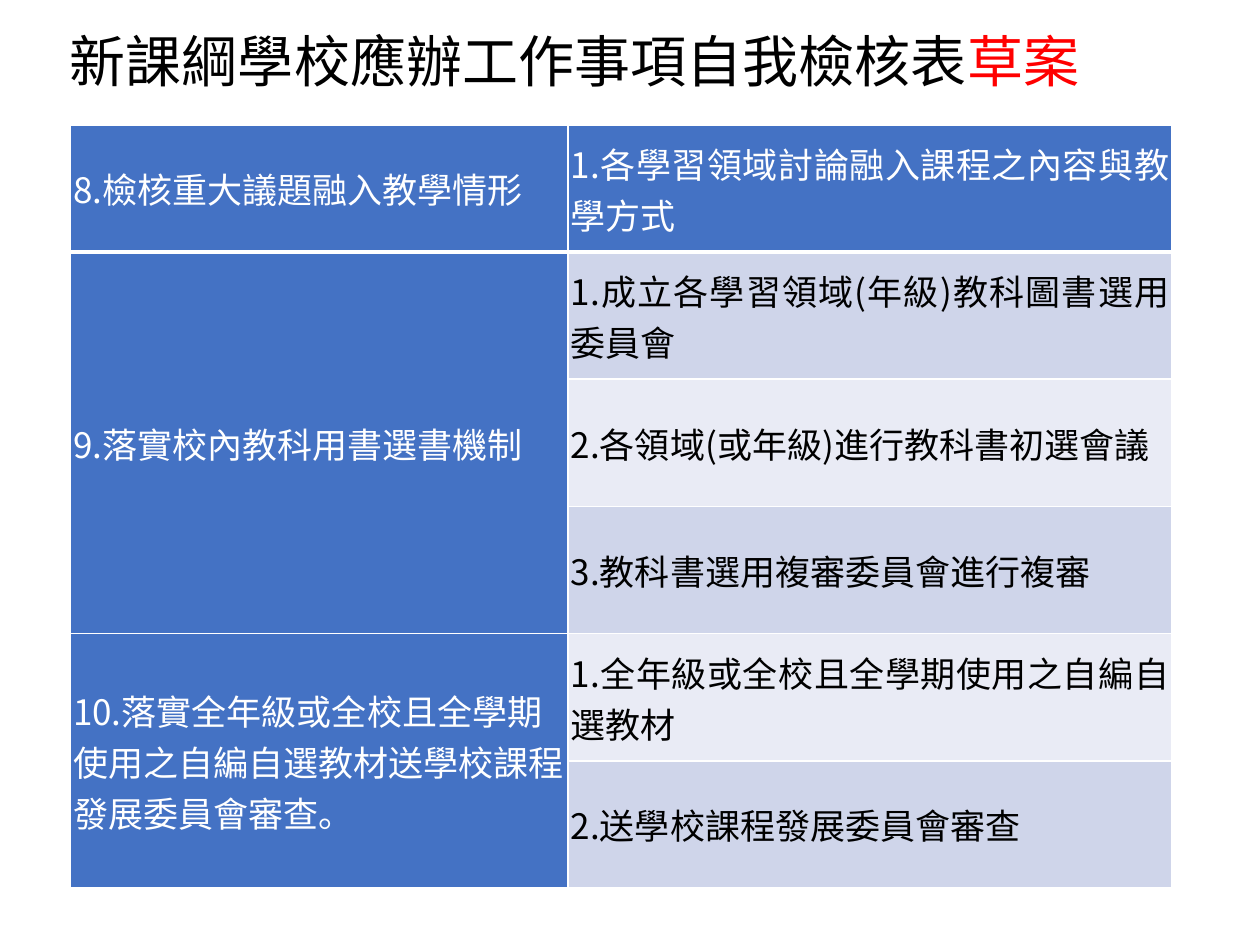
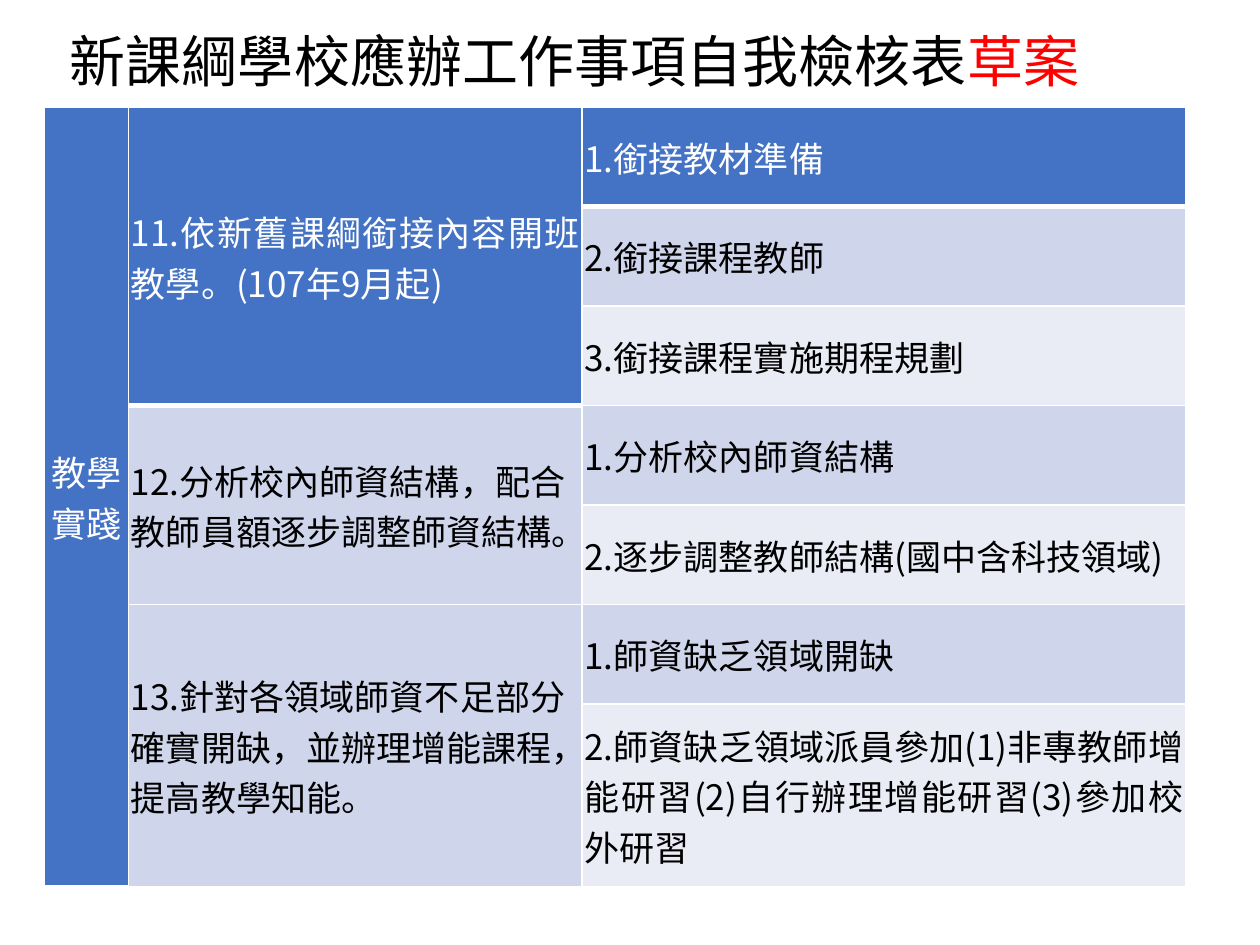
from lxml import etree
from pptx import Presentation
from pptx.dml.color import RGBColor
from pptx.enum.text import MSO_ANCHOR, MSO_AUTO_SIZE, PP_ALIGN
from pptx.oxml.ns import qn
from pptx.util import Inches, Pt

LEFT, CENTER, JUSTIFY = PP_ALIGN.LEFT, PP_ALIGN.CENTER, PP_ALIGN.JUSTIFY
TITLE_ONLY = 5
FONT = "Noto Sans CJK TC"
COLORS = {"black": "000000", "white": "FFFFFF", "draft": "FF0000",
          "heading": "4472C4", "odd": "CFD5EA", "even": "E9EBF5"}

# Content
TITLE = [("新課綱學校應辦工作事項自我檢核表", "black"), ("草案", "draft")]
TITLE_BOX = (0.19, 0.16, 8.74, 0.64)

# Each task: wording, alignment, check items
CHECKLISTS = [
    {
        "at": (0.56, 0.99),
        "columns": [3.95, 4.79],
        "rows": [1.01] * 6,
        "category": None,
        "blue_tasks": True,
        "tasks": [
            ("8.檢核重大議題融入教學情形", LEFT,
             ["1.各學習領域討論融入課程之內容與教學方式"]),
            ("9.落實校內教科用書選書機制", LEFT,
             ["1.成立各學習領域(年級)教科圖書選用委員會",
              "2.各領域(或年級)進行教科書初選會議",
              "3.教科書選用複審委員會進行複審"]),
            ("10.落實全年級或全校且全學期使用之自編自選教材送學校課程發展委員會審查。", LEFT,
             ["1.全年級或全校且全學期使用之自編自選教材",
              "2.送學校課程發展委員會審查"]),
        ],
    },
    {
        "at": (0.35, 0.85),
        "columns": [0.67, 3.6, 4.79],
        "rows": [0.79] * 6 + [1.45],
        "category": "教學實踐",
        "blue_tasks": False,
        "tasks": [
            ("11.依新舊課綱銜接內容開班教學。(107年9月起)", JUSTIFY,
             ["1.銜接教材準備", "2.銜接課程教師", "3.銜接課程實施期程規劃"]),
            ("12.分析校內師資結構，配合教師員額逐步調整師資結構。", LEFT,
             ["1.分析校內師資結構", "2.逐步調整教師結構(國中含科技領域)"]),
            ("13.針對各領域師資不足部分確實開缺，並辦理增能課程，提高教學知能。", LEFT,
             ["1.師資缺乏領域開缺",
              "2.師資缺乏領域派員參加(1)非專教師增能研習(2)自行辦理增能研習(3)參加校外研習"]),
        ],
    },
]

TITLE_FORMAT = {"word_wrap": True, "auto_size": MSO_AUTO_SIZE.SHAPE_TO_FIT_TEXT,
                "vertical_anchor": MSO_ANCHOR.TOP}
CELL_FORMAT = {"vertical_anchor": MSO_ANCHOR.MIDDLE,
               "margin_left": Inches(0.02), "margin_right": Inches(0.02),
               "margin_top": 0, "margin_bottom": 0}
HEADER_BORDERS = {"a:lnL": 1, "a:lnR": 1, "a:lnT": 1, "a:lnB": 3}


def rgb(color):
    return RGBColor.from_string(COLORS[color])


def apply_format(target, values):
    for name, value in values.items():
        setattr(target, name, value)


def add_run(paragraph, text, size, color):
    run = paragraph.add_run()
    run.text = text
    apply_format(run.font, {"name": FONT, "size": Pt(size), "bold": False})
    run.font.color.rgb = rgb(color)
    east_asian = etree.SubElement(run.font._element, qn("a:ea"))
    east_asian.set("typeface", FONT)


def add_title(slide):
    title = slide.shapes.title
    title.left, title.top, title.width, title.height = map(Inches, TITLE_BOX)
    apply_format(title.text_frame, TITLE_FORMAT)
    heading = title.text_frame.paragraphs[0]
    heading.alignment = CENTER
    for text, color in TITLE:
        add_run(heading, text, 32, color)


def add_header_borders(cell):
    properties = cell._tc.get_or_add_tcPr()
    for side, width in HEADER_BORDERS.items():
        line = etree.SubElement(properties, qn(side), w=str(Pt(width)))
        fill = etree.SubElement(line, qn("a:solidFill"))
        etree.SubElement(fill, qn("a:srgbClr"), val=COLORS["white"])


def fill_cell(table, row, column, text, alignment, span=1, blue=False):
    """Write one cell; the top row is always blue, the others are banded."""
    cell = table.cell(row, column)
    if span > 1:
        cell.merge(table.cell(row + span - 1, column))
    blue = blue or row == 0
    apply_format(cell, CELL_FORMAT)
    if row == 0:
        add_header_borders(cell)
    cell.fill.solid()
    cell.fill.fore_color.rgb = rgb("heading" if blue else "odd" if row % 2 else "even")
    paragraph = cell.text_frame.paragraphs[0]
    paragraph.alignment = alignment
    add_run(paragraph, text, 20, "white" if blue else "black")


def add_checklist(slide, checklist):
    columns, rows = checklist["columns"], checklist["rows"]
    box = (*checklist["at"], sum(columns), sum(rows))
    table = slide.shapes.add_table(len(rows), len(columns), *map(Inches, box)).table
    for column, width in zip(table.columns, columns):
        column.width = Inches(width)
    for row, height in zip(table.rows, rows):
        row.height = Inches(height)

    if checklist["category"]:
        fill_cell(table, 0, 0, checklist["category"], CENTER, len(rows))
    task_column, item_column = len(columns) - 2, len(columns) - 1
    first_row = 0
    for task, alignment, items in checklist["tasks"]:
        fill_cell(table, first_row, task_column, task, alignment,
                  len(items), checklist["blue_tasks"])
        for row, item in enumerate(items, first_row):
            fill_cell(table, row, item_column, item, JUSTIFY)
        first_row += len(items)


def main():
    deck = Presentation()
    deck.slide_width, deck.slide_height = Inches(10), Inches(7.5)
    for checklist in CHECKLISTS:
        slide = deck.slides.add_slide(deck.slide_layouts[TITLE_ONLY])
        add_checklist(slide, checklist)
        add_title(slide)
    deck.save("out.pptx")


if __name__ == "__main__":
    main()
